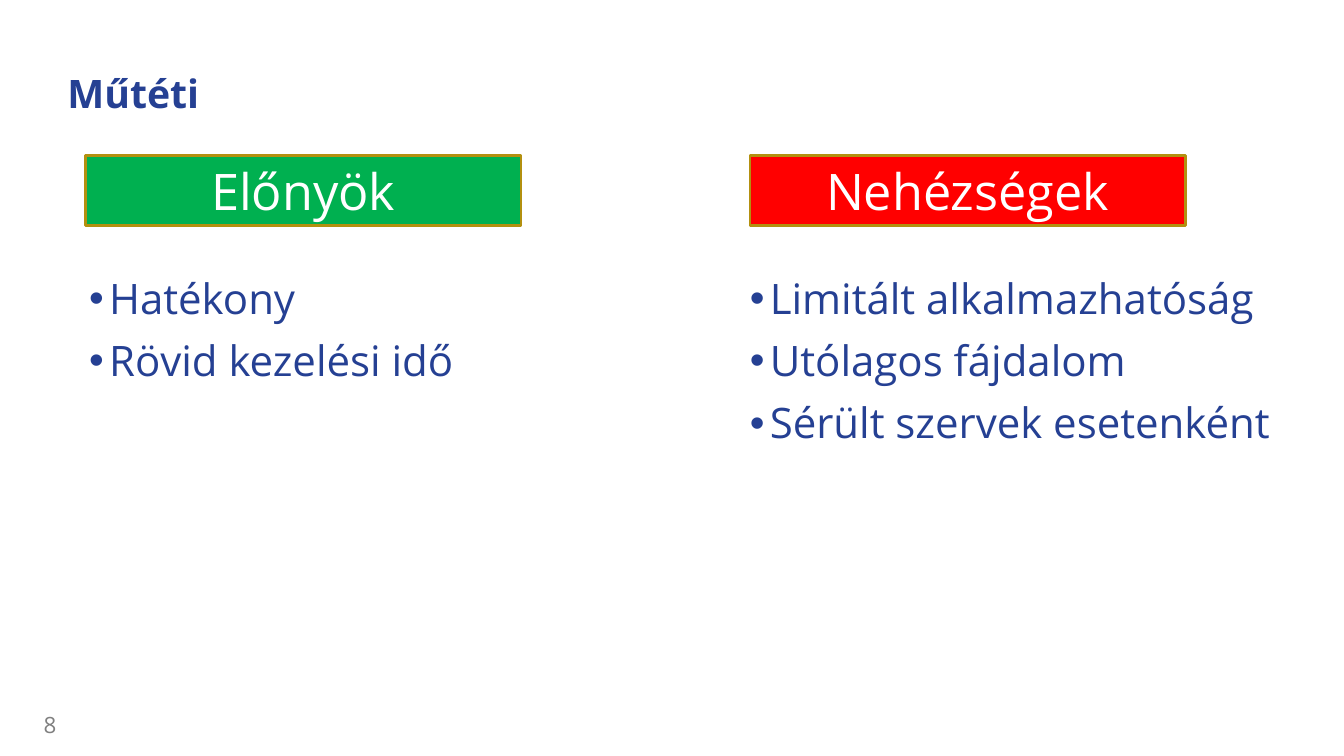
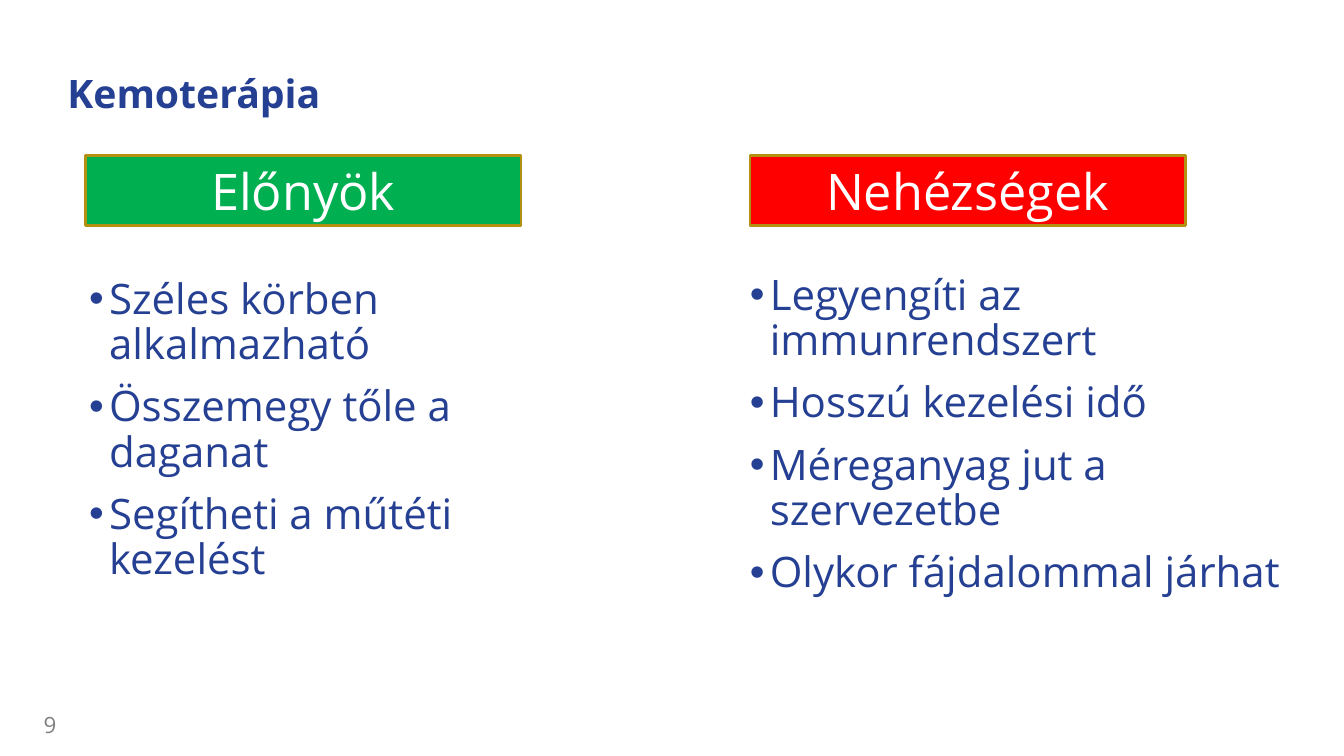
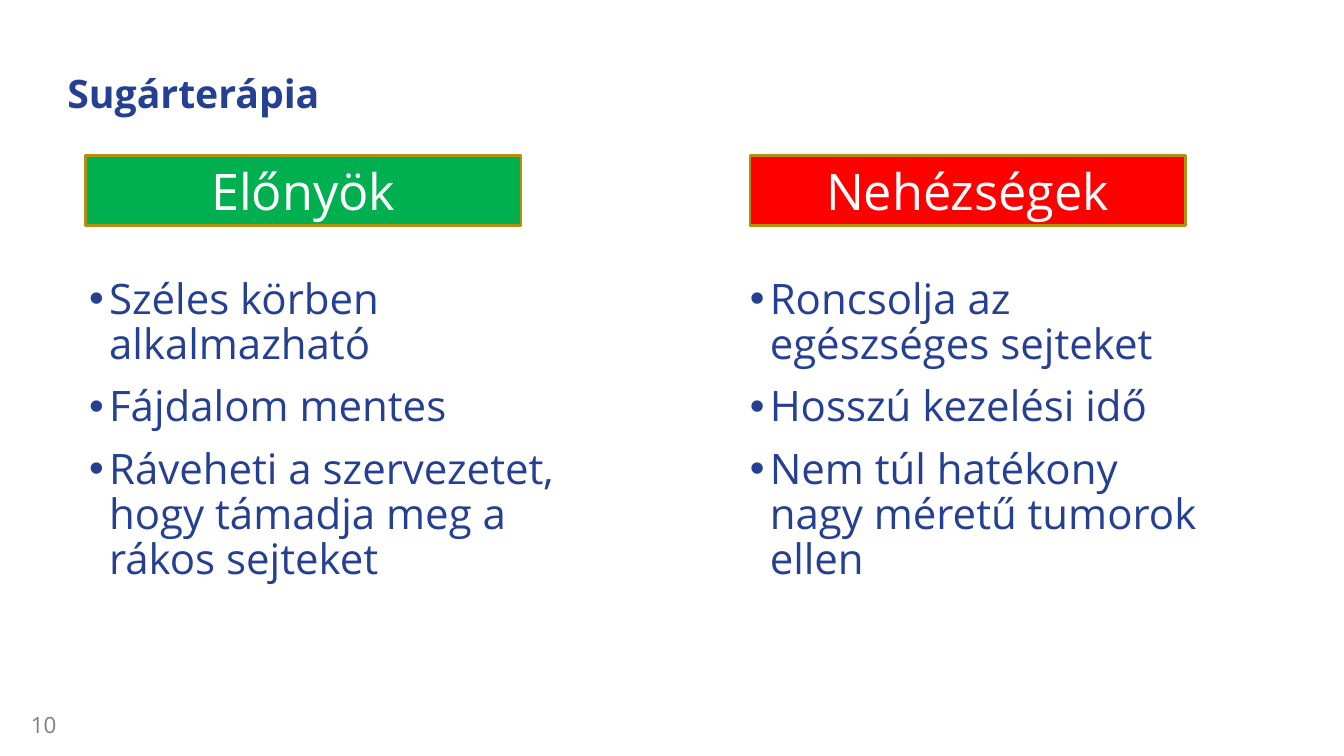
"""Builds three slides weighing the benefits and difficulties of cancer treatments."""
from lxml.etree import SubElement
from pptx import Presentation
from pptx.dml.color import RGBColor
from pptx.enum.shapes import MSO_SHAPE
from pptx.enum.text import MSO_ANCHOR as Anchor, PP_ALIGN as Align
from pptx.oxml.ns import qn
from pptx.util import Cm, Pt

BLUE = RGBColor(0x25, 0x40, 0x93)
GREEN = RGBColor(0x00, 0xB0, 0x50)
RED = RGBColor(0xFF, 0x00, 0x00)
GOLD = RGBColor(0xB3, 0x90, 0x0F)
GREY = RGBColor(0x80, 0x80, 0x80)
WHITE = RGBColor(0xFF, 0xFF, 0xFF)
FONT = "Open Sans"

FIRST_NUMBER = 8
HEADERS = [("Előnyök", GREEN, 2.16), ("Nehézségek", RED, 18.9)]
HEADER_TOP, HEADER_WIDTH, HEADER_HEIGHT = 3.91, 10.97, 1.78
LIST_HEIGHT = 9.6
NARROW, WIDE = 11.89, 14.76
TREATMENTS = [
    {
        "title": "Műtéti",
        "benefits": ["Hatékony", "Rövid kezelési idő"],
        "difficulties": [
            "Limitált alkalmazhatóság",
            "Utólagos fájdalom",
            "Sérült szervek esetenként",
        ],
        "difficulties_box": (7.01, WIDE),
    },
    {
        "title": "Kemoterápia",
        "benefits": [
            "Széles körben alkalmazható",
            "Összemegy tőle a daganat",
            "Segítheti a műtéti kezelést",
        ],
        "difficulties": [
            "Legyengíti az immunrendszert",
            "Hosszú kezelési idő",
            "Méreganyag jut a szervezetbe",
            "Olykor fájdalommal járhat",
        ],
        "difficulties_box": (6.91, WIDE),
    },
    {
        "title": "Sugárterápia",
        "benefits": [
            "Széles körben alkalmazható",
            "Fájdalom mentes",
            "Ráveheti a szervezetet, hogy támadja meg a rákos sejteket",
        ],
        "difficulties": [
            "Roncsolja az egészséges sejteket",
            "Hosszú kezelési idő",
            "Nem túl hatékony nagy méretű tumorok ellen",
        ],
        "difficulties_box": (7.01, NARROW),
    },
]


def style_text(paragraph, size, color, bold=False):
    for run in paragraph.runs:
        run.font.name = FONT
        run.font.size = Pt(size)
        run.font.color.rgb = color
        run.font.bold = bold


def add_text(slide, box, lines, size, color, anchor=Anchor.TOP, bold=False):
    frame = slide.shapes.add_textbox(*map(Cm, box)).text_frame
    frame.word_wrap = True
    frame.vertical_anchor = anchor
    frame.margin_left = frame.margin_top = frame.margin_right = frame.margin_bottom = 0
    frame.text = "\n".join(lines)
    for paragraph in frame.paragraphs:
        style_text(paragraph, size, color, bold)
    return frame.paragraphs


def add_title(slide, title):
    box = (1.7, 0.84, 26.52, 2.11)
    paragraph = add_text(slide, box, [title], 28, BLUE, Anchor.BOTTOM, bold=True)[0]
    paragraph.line_spacing = 0.9


def add_number(slide, number):
    box = (0.58, 17.98, 0.84, 0.61)
    paragraph = add_text(slide, box, [str(number)], 16, GREY, Anchor.BOTTOM)[0]
    paragraph.alignment = Align.RIGHT


def add_header(slide, label, fill, left):
    box = (left, HEADER_TOP, HEADER_WIDTH, HEADER_HEIGHT)
    header = slide.shapes.add_shape(MSO_SHAPE.RECTANGLE, *map(Cm, box))
    header.shadow.inherit = False
    header.fill.solid()
    header.fill.fore_color.rgb = fill
    header.line.color.rgb = GOLD
    header.line.width = Pt(2)
    header.text_frame.text = label
    header.text_frame.vertical_anchor = Anchor.MIDDLE
    paragraph = header.text_frame.paragraphs[0]
    paragraph.alignment = Align.CENTER
    style_text(paragraph, 36, WHITE)


def add_bullets(slide, left, top, width, items):
    paragraphs = add_text(slide, (left, top, width, LIST_HEIGHT), items, 30, BLUE)
    for index, paragraph in enumerate(paragraphs):
        properties = paragraph._p.get_or_add_pPr()
        properties.set("marL", str(Cm(0.5)))
        properties.set("indent", str(-Cm(0.5)))
        SubElement(properties, qn("a:buFont")).set("typeface", "Arial")
        SubElement(properties, qn("a:buChar")).set("char", "•")
        paragraph.line_spacing = 0.9
        paragraph.space_before = Pt(12 if index else 0)


def main():
    presentation = Presentation()
    presentation.slide_width, presentation.slide_height = Cm(33.87), Cm(19.05)
    for number, treatment in enumerate(TREATMENTS, FIRST_NUMBER):
        slide = presentation.slides.add_slide(presentation.slide_layouts[6])
        add_title(slide, treatment["title"])
        for header in HEADERS:
            add_header(slide, *header)
        add_bullets(slide, 2.25, 7.01, NARROW, treatment["benefits"])
        add_bullets(slide, 18.9, *treatment["difficulties_box"], treatment["difficulties"])
        add_number(slide, number)
    presentation.save("out.pptx")


if __name__ == "__main__":
    main()
